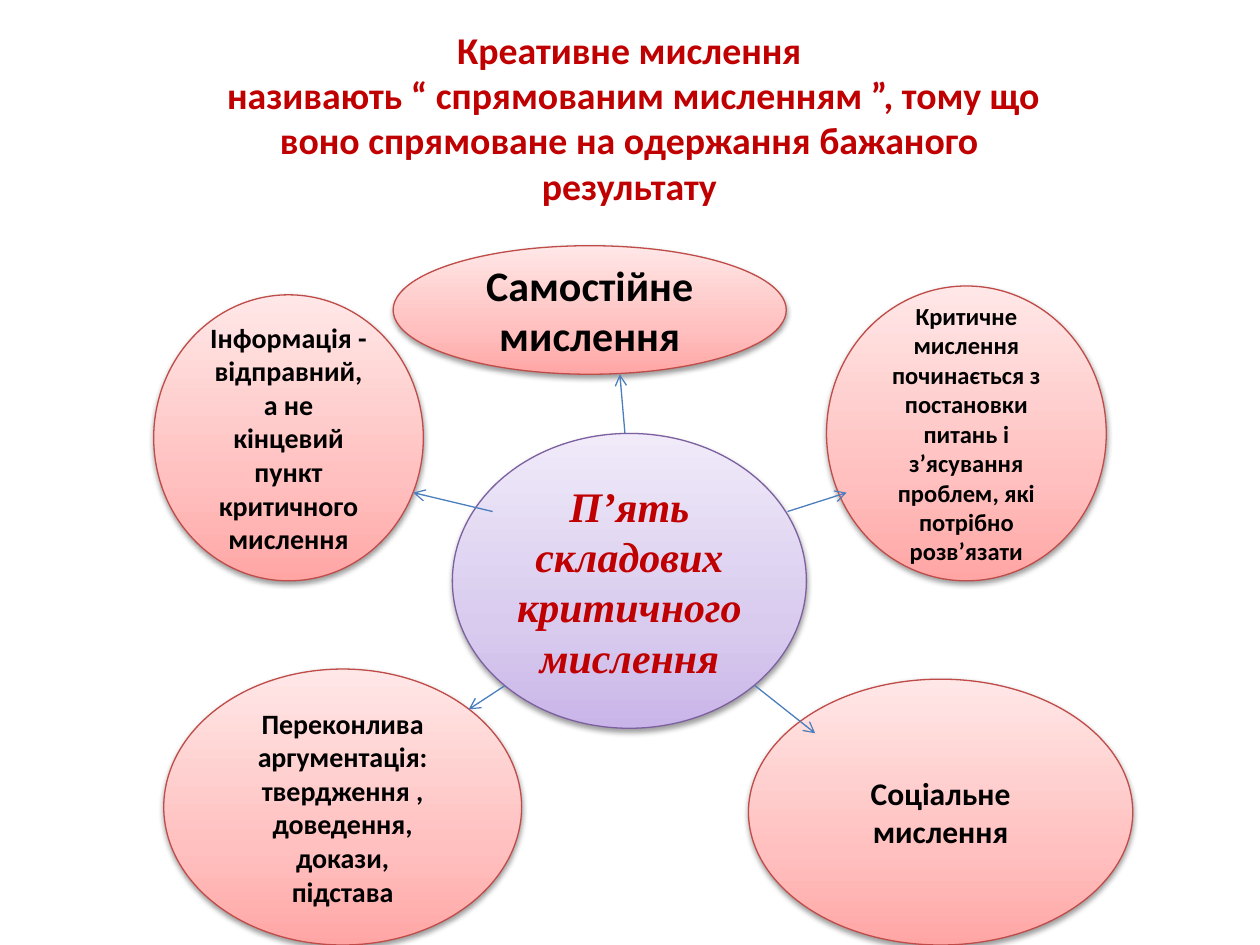
from dataclasses import dataclass

from lxml import etree
from pptx import Presentation
from pptx.dml.color import RGBColor
from pptx.enum.shapes import MSO_CONNECTOR, MSO_SHAPE
from pptx.enum.text import MSO_ANCHOR, PP_ALIGN
from pptx.oxml import parse_xml
from pptx.oxml.ns import nsdecls, qn
from pptx.util import Inches, Pt

OVAL = MSO_SHAPE.OVAL
STRAIGHT = MSO_CONNECTOR.STRAIGHT
MIDDLE = MSO_ANCHOR.MIDDLE
CENTER = PP_ALIGN.CENTER


@dataclass(frozen=True)
class Palette:
    """Gradient colours run from the bottom of a bubble to its top."""
    bottom: str
    middle: str
    top: str
    outline: str


@dataclass(frozen=True)
class Theme:
    red: str = "C00000"
    black: str = "000000"
    arrow: str = "4B7EBC"
    purple_bubble: Palette = Palette("C9B5E8", "D8CBEE", "F0EAF9", "7D60A0")
    pink_bubble: Palette = Palette("FFA6A5", "FFC0BF", "FFE7E7", "BF4C48")
    body_font: str = "Calibri"
    center_font: str = "Times New Roman"
    title_size: float = 21.6
    large: float = 24
    medium: float = 18
    normal: float = 16
    small: float = 14
    line_width: float = 0.75


THEME = Theme()


@dataclass(frozen=True)
class Bubble:
    left: float
    top: float
    width: float
    height: float
    paragraphs: tuple[str, ...]
    size: float


@dataclass(frozen=True)
class Arrow:
    start: tuple[float, float]
    end: tuple[float, float]


TITLE = ("Креативне мислення\v називають “ спрямованим мисленням ”, "
         "тому що воно спрямоване на одержання бажаного результату")

CENTER_BUBBLE = Bubble(3.59, 3.44, 2.81, 2.34,
                       ("П’ять складових критичного мислення",), THEME.large)

COMPONENTS = (
    Bubble(3.12, 1.95, 3.12, 1.02, ("Самостійне мислення",), THEME.large),
    Bubble(1.22, 2.34, 2.14, 2.27,
           ("Інформація - відправний, а не кінцевий пункт критичного мислення",),
           THEME.normal),
    Bubble(6.56, 2.27, 2.22, 2.34,
           ("Критичне мислення починається з постановки питань і "
            "з’ясування проблем, які потрібно розв’язати",), THEME.small),
    Bubble(1.3, 5.31, 2.84, 2.19,
           ("Переконлива аргументація:", "твердження ,", "доведення,",
            "докази,", "підстава"), THEME.normal),
    Bubble(5.94, 5.39, 3.05, 2.11, ("Соціальне мислення",), THEME.medium),
)

ARROWS = (
    Arrow((4.96, 3.44), (4.92, 2.97)),
    Arrow((6.25, 4.06), (6.72, 3.91)),
    Arrow((3.91, 4.06), (3.28, 3.91)),
    Arrow((4.01, 5.44), (3.72, 5.63)),
    Arrow((5.99, 5.44), (6.47, 5.82)),
)


def write_text(frame, paragraphs: tuple[str, ...], *, size: float,
               color: str = THEME.black, font: str = THEME.body_font,
               italic: bool = False) -> None:
    frame.word_wrap = True
    frame.vertical_anchor = MIDDLE
    for index, text in enumerate(paragraphs):
        paragraph = frame.paragraphs[0] if index == 0 else frame.add_paragraph()
        paragraph.text = text
        paragraph.alignment = CENTER
        for run in paragraph.runs:
            run.font.name = font
            run.font.size = Pt(size)
            run.font.bold = True
            run.font.italic = italic
            run.font.color.rgb = RGBColor.from_string(color)


def apply_gradient(shape, palette: Palette) -> None:
    """Set a three-stop upward gradient, which the public API cannot build."""
    stops = ((0, palette.bottom), (35, palette.middle), (100, palette.top))
    stop_xml = "".join(
        f'<a:gs pos="{position * 1000}"><a:srgbClr val="{color}"/></a:gs>'
        for position, color in stops)
    gradient = parse_xml(
        f'<a:gradFill {nsdecls("a")} rotWithShape="1"><a:gsLst>{stop_xml}</a:gsLst>'
        f'<a:lin ang="{270 * 60000}" scaled="0"/></a:gradFill>')
    shape.fill.background()
    properties = shape._element.spPr
    properties.replace(properties.find(qn("a:noFill")), gradient)


def apply_soft_shadow(shape) -> None:
    shape.shadow.inherit = False
    effects = shape._element.spPr.find(qn("a:effectLst"))
    effects.append(parse_xml(
        f'<a:outerShdw {nsdecls("a")} blurRad="{Pt(3.1)}" dist="{Pt(1.6)}" '
        f'dir="{90 * 60000}" rotWithShape="0"><a:srgbClr val="{THEME.black}">'
        '<a:alpha val="38000"/></a:srgbClr></a:outerShdw>'))


def draw_bubble(slide, bubble: Bubble, palette: Palette, **text_format) -> None:
    shape = slide.shapes.add_shape(
        OVAL, Inches(bubble.left), Inches(bubble.top),
        Inches(bubble.width), Inches(bubble.height))
    apply_gradient(shape, palette)
    shape.line.color.rgb = RGBColor.from_string(palette.outline)
    shape.line.width = Pt(THEME.line_width)
    apply_soft_shadow(shape)
    write_text(shape.text_frame, bubble.paragraphs, size=bubble.size, **text_format)


def draw_arrow(slide, arrow: Arrow) -> None:
    points = (Inches(value) for value in arrow.start + arrow.end)
    connector = slide.shapes.add_connector(STRAIGHT, *points)
    connector.line.color.rgb = RGBColor.from_string(THEME.arrow)
    connector.line.width = Pt(THEME.line_width)
    properties = connector._element.spPr
    etree.SubElement(properties.find(qn("a:ln")), qn("a:tailEnd"), type="arrow")
    etree.SubElement(properties, qn("a:effectLst"))


def main() -> None:
    presentation = Presentation()
    presentation.slide_width = Inches(10)
    presentation.slide_height = Inches(7.5)
    slide = presentation.slides.add_slide(presentation.slide_layouts[6])

    title = slide.shapes.add_textbox(Inches(1.53), Inches(0.3), Inches(6.93), Inches(1.26))
    write_text(title.text_frame, (TITLE,), size=THEME.title_size, color=THEME.red)

    draw_bubble(slide, CENTER_BUBBLE, THEME.purple_bubble, color=THEME.red,
                font=THEME.center_font, italic=True)
    for component in COMPONENTS:
        draw_bubble(slide, component, THEME.pink_bubble)
    for arrow in ARROWS:
        draw_arrow(slide, arrow)

    presentation.save("out.pptx")


if __name__ == "__main__":
    main()
